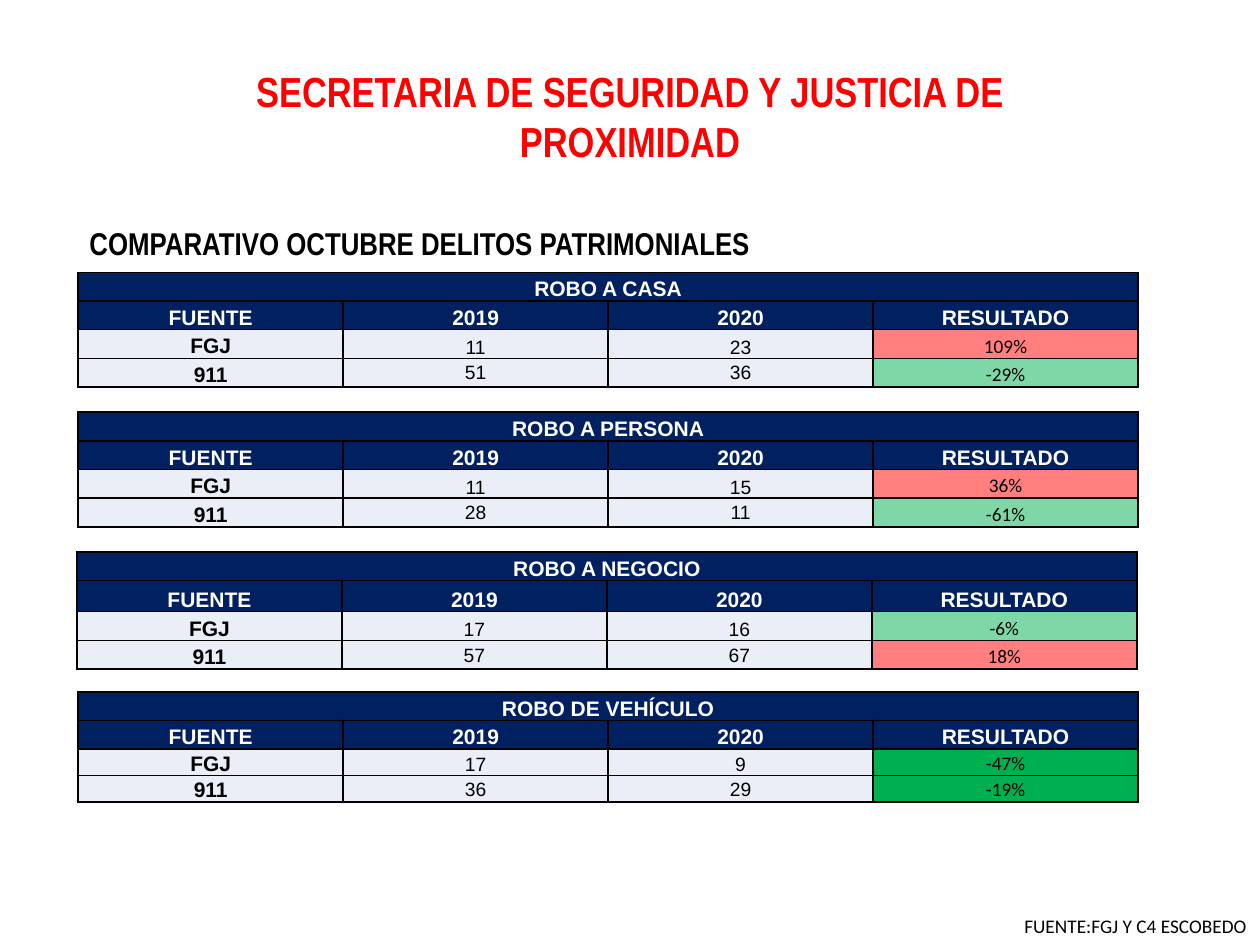
from lxml.etree import SubElement
from pptx import Presentation
from pptx.dml.color import RGBColor
from pptx.enum.text import MSO_ANCHOR as Anchor, MSO_AUTO_SIZE as AutoSize, PP_ALIGN as Align
from pptx.oxml import parse_xml
from pptx.oxml.ns import nsdecls, qn
from pptx.util import Pt

TITLE = "SECRETARIA DE SEGURIDAD Y JUSTICIA DE PROXIMIDAD"
SUBTITLE = "COMPARATIVO OCTUBRE DELITOS PATRIMONIALES"
SOURCE = "FUENTE:FGJ Y C4 ESCOBEDO"
HEADINGS = ("FUENTE", "2019", "2020", "RESULTADO")

# crime, left, row heights, opacity of the result colour, rows
CRIMES = [
    ("ROBO A CASA", 44.7, (16.4, 16.4, 16.4, 16.4), 50,
     [("FGJ", "11", "23", "109%"), ("911", "51", "36", "-29%")]),
    ("ROBO A PERSONA", 44.7, (16.4, 16.4, 16.4, 16.4), 50,
     [("FGJ", "11", "15", "36%"), ("911", "28", "11", "-61%")]),
    ("ROBO A NEGOCIO", 44, (16.4, 17.8, 16.4, 16.4), 50,
     [("FGJ", "17", "16", "-6%"), ("911", "57", "67", "18%")]),
    ("ROBO DE VEHÍCULO", 44.7, (16.4, 16.4, 15.1, 15.1), 100,
     [("FGJ", "17", "9", "-47%"), ("911", "36", "29", "-19%")]),
]
FIRST_TOP, TABLE_STEP, COLUMN_WIDTH = 155.6, 79.9, 151.4

NAVY, PALE, WHITE, BLACK = "002060", "EAEFF7", "FFFFFF", "000000"
RISE, FALL = "FF0000", "00B050"


def color(value):
    return RGBColor.from_string(value)


def add_run(paragraph, text, font, size, ink, bold=False):
    run = paragraph.add_run()
    run.text = text
    run.font.name, run.font.size, run.font.bold = font, Pt(size), bold
    run.font.color.rgb = color(ink)


def add_label(slide, box, text, font, size, ink, bold=False, align=Align.LEFT, wrap=True):
    frame = slide.shapes.add_textbox(*map(Pt, box)).text_frame
    frame.word_wrap = wrap
    frame.auto_size = AutoSize.SHAPE_TO_FIT_TEXT
    frame.paragraphs[0].alignment = align
    add_run(frame.paragraphs[0], text, font, size, ink, bold)


def add_borders(cell):
    properties = cell._tc.get_or_add_tcPr()
    for index, side in enumerate(("lnL", "lnR", "lnT", "lnB")):
        properties.insert(index, parse_xml(
            f'<a:{side} {nsdecls("a")} w="{Pt(1)}"><a:solidFill>'
            f'<a:srgbClr val="{BLACK}"/></a:solidFill></a:{side}>'))


def style_cell(cell, fill, opacity=100, anchor=Anchor.BOTTOM):
    cell.margin_left = cell.margin_right = cell.margin_top = Pt(0.7)
    cell.margin_bottom = 0
    cell.vertical_anchor = anchor
    cell.fill.solid()
    cell.fill.fore_color.rgb = color(fill)
    if opacity < 100:
        rgb = cell._tc.tcPr.find(".//" + qn("a:srgbClr"))
        SubElement(rgb, qn("a:alpha"), val=str(opacity * 1000))
    add_borders(cell)


def write_cell(cell, text, font, size, ink, bold=False):
    paragraph = cell.text_frame.paragraphs[0]
    paragraph.alignment = Align.CENTER
    add_run(paragraph, text, font, size, ink, bold)


def add_crime_table(slide, top, crime, left, heights, opacity, rows):
    table = slide.shapes.add_table(
        len(heights), len(HEADINGS), Pt(left), Pt(top),
        Pt(COLUMN_WIDTH * len(HEADINGS)), Pt(sum(heights))).table
    for column in table.columns:
        column.width = Pt(COLUMN_WIDTH)
    for row, height in zip(table.rows, heights):
        row.height = Pt(height)

    for column, heading in enumerate(HEADINGS):
        style_cell(table.cell(0, column), NAVY)
        style_cell(table.cell(1, column), NAVY)
        write_cell(table.cell(1, column), heading, "Arial", 12, WHITE, True)
    table.cell(0, 0).merge(table.cell(0, len(HEADINGS) - 1))
    write_cell(table.cell(0, 0), crime, "Arial", 12, WHITE, True)

    for number, (agency, *counts, result) in enumerate(rows, 2):
        cells = table.rows[number].cells
        style_cell(cells[0], PALE)
        write_cell(cells[0], agency, "Arial", 12, BLACK, True)
        for column, count in enumerate(counts, 1):
            style_cell(cells[column], PALE,
                       anchor=Anchor.BOTTOM if number == 2 else Anchor.MIDDLE)
            write_cell(cells[column], count, "Arial", 11, BLACK)
        style_cell(cells[3], FALL if result.startswith("-") else RISE, opacity)
        write_cell(cells[3], result, "Calibri", 11, BLACK)


def main():
    deck = Presentation()
    deck.slide_width, deck.slide_height = Pt(720), Pt(540)
    slide = deck.slides.add_slide(deck.slide_layouts[6])
    add_label(slide, (136.8, 33.8, 446.4, 65.5), TITLE, "Arial Narrow", 24, RISE,
              True, Align.CENTER)
    add_label(slide, (44, 124.6, 531.4, 28.8), SUBTITLE, "Arial Narrow", 18, BLACK, True)
    for index, crime in enumerate(CRIMES):
        add_crime_table(slide, FIRST_TOP + index * TABLE_STEP, *crime)
    add_label(slide, (578.2, 519.1, 142.6, 20.9), SOURCE, "Calibri", 11, BLACK, wrap=False)
    deck.save("out.pptx")


if __name__ == "__main__":
    main()
